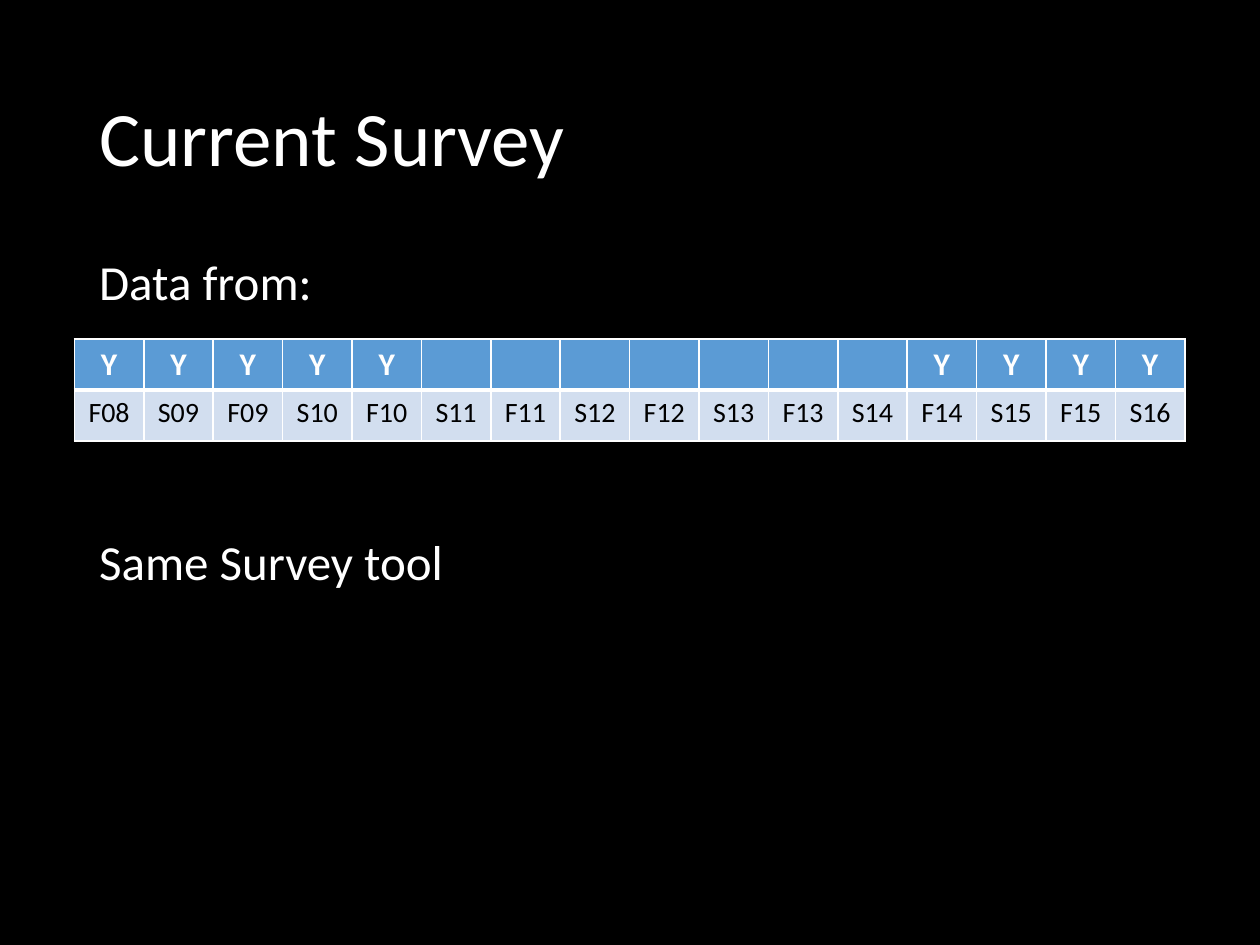
"""Build the Current Survey slide with its table of survey terms."""
import dataclasses

import lxml.etree
import pptx
import pptx.dml.color
import pptx.enum.text
import pptx.oxml.ns
import pptx.util

Cm = pptx.util.Cm
Pt = pptx.util.Pt


@dataclasses.dataclass(frozen=True)
class Theme:
    font: str = "Calibri"
    background: str = "000000"
    light: str = "FFFFFF"
    dark: str = "000000"
    header_fill: str = "5B9BD5"
    term_fill: str = "D2DEEF"
    title_size: int = 44
    body_size: int = 28
    mark_size: int = 18
    term_size: int = 16
    thin: int = 1
    thick: int = 3


THEME = Theme()
TERMS = [f"{season}{year + shift:02d}"
         for year in range(8, 16) for season, shift in (("F", 0), ("S", 1))]
UNSURVEYED = TERMS[TERMS.index("S11"):TERMS.index("F14")]
MARKS = ["" if term in UNSURVEYED else "Y" for term in TERMS]


def paint(fill, color):
    fill.solid()
    fill.fore_color.rgb = pptx.dml.color.RGBColor.from_string(color)


def add_text(paragraph, text, size, color, bold=False):
    run = paragraph.add_run()
    run.text = text
    run.font.name = THEME.font
    run.font.size = Pt(size)
    run.font.bold = bold
    run.font.color.rgb = pptx.dml.color.RGBColor.from_string(color)


def place(shape, left, top, width, height):
    shape.left, shape.top = Cm(left), Cm(top)
    shape.width, shape.height = Cm(width), Cm(height)


def add_title(slide, text):
    title = slide.shapes.title
    place(title, 1.75, 1.01, 21.9, 3.68)
    title.text_frame.vertical_anchor = pptx.enum.text.MSO_ANCHOR.MIDDLE
    heading = title.text_frame.paragraphs[0]
    heading.alignment = pptx.enum.text.PP_ALIGN.LEFT
    heading.line_spacing = 0.9
    add_text(heading, text, THEME.title_size, THEME.light)


def add_body(slide, statements):
    body = slide.shapes.add_textbox(Cm(1.75), Cm(5.07), Cm(21.9), Cm(12.09))
    frame = body.text_frame
    frame.word_wrap = True
    for index, (text, space_before) in enumerate(statements):
        statement = frame.add_paragraph() if index else frame.paragraphs[0]
        statement.line_spacing = 0.9
        statement.space_before = Pt(space_before)
        add_text(statement, text, THEME.body_size, THEME.light)


def set_borders(cell, widths):
    properties = cell._tc.get_or_add_tcPr()
    qn = pptx.oxml.ns.qn
    for side, width in zip("LRTB", widths):
        line = lxml.etree.SubElement(properties, qn(f"a:ln{side}"), w=str(Pt(width)))
        solid = lxml.etree.SubElement(line, qn("a:solidFill"))
        lxml.etree.SubElement(solid, qn("a:srgbClr"), val=THEME.light)


def fill_row(table, row, texts, size, color, fill, bold, borders):
    table.rows[row].height = Cm(1.03)
    for column, text in enumerate(texts):
        cell = table.cell(row, column)
        set_borders(cell, borders)
        paint(cell.fill, fill)
        entry = cell.text_frame.paragraphs[0]
        entry.alignment = pptx.enum.text.PP_ALIGN.CENTER
        if text:
            add_text(entry, text, size, color, bold)


def add_term_table(slide):
    table = slide.shapes.add_table(
        2, len(TERMS), Cm(1.5), Cm(6.83), Cm(22.4), Cm(2.06)).table
    for column in table.columns:
        column.width = Cm(1.4)
    thin, thick = THEME.thin, THEME.thick
    fill_row(table, 0, MARKS, THEME.mark_size, THEME.light,
             THEME.header_fill, True, (thin, thin, thin, thick))
    fill_row(table, 1, TERMS, THEME.term_size, THEME.dark,
             THEME.term_fill, False, (thin, thin, thick, thin))


def main():
    deck = pptx.Presentation()
    deck.slide_width, deck.slide_height = Cm(25.4), Cm(19.05)
    slide = deck.slides.add_slide(deck.slide_layouts.get_by_name("Title Only"))
    paint(slide.background.fill, THEME.background)
    add_title(slide, "Current Survey")
    add_body(slide, [("Data from:", 10), ("Same Survey tool", 130)])
    add_term_table(slide)
    deck.save("out.pptx")


if __name__ == "__main__":
    main()
